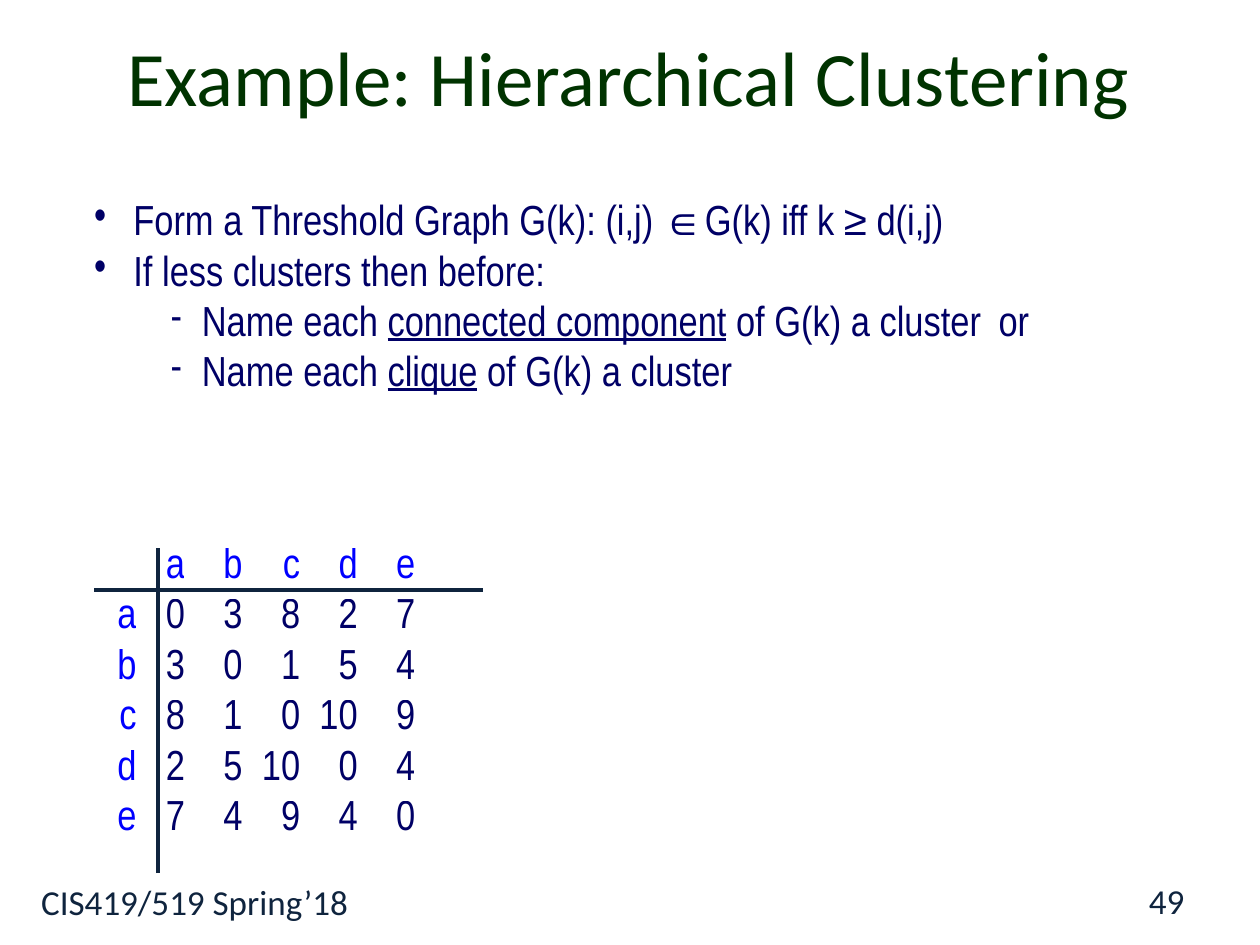
import pptx
import pptx.util
import pptx.dml.color
import pptx.enum.shapes
import pptx.enum.text
from lxml import etree

Cm, Pt = pptx.util.Cm, pptx.util.Pt
RGB = pptx.dml.color.RGBColor
ALIGN = pptx.enum.text.PP_ALIGN
MIDDLE = pptx.enum.text.MSO_ANCHOR.MIDDLE

NAVY = RGB(0x00, 0x00, 0x66)
BLUE = RGB(0x00, 0x00, 0xFF)
GREEN = RGB(0x00, 0x33, 0x00)
SLATE = RGB(0x0F, 0x24, 0x3E)
BODY = "Arial Narrow"
HEAD = "Calibri"

# Bullet, left margin and hanging indent in cm, runs as (text, underlined)
POINTS = [
    ("•", 0.79, 0.79, [("Form a Threshold Graph G(k): (i,j) ∈G(k) iff k ≥ d(i,j)", False)]),
    ("•", 0.79, 0.79, [("If less clusters then before:", False)]),
    ("-", 2.17, 0.63, [("Name each ", False), ("connected component", True),
                       (" of G(k) a cluster\tor", False)]),
    ("-", 2.17, 0.63, [("Name each ", False), ("clique", True),
                       (" of G(k) a cluster", False)]),
]
OR_TAB = 18.64

NAMES = "abcde"
DIST = [
    [0, 3, 8, 2, 7],
    [3, 0, 1, 5, 4],
    [8, 1, 0, 10, 9],
    [2, 5, 10, 0, 4],
    [7, 4, 9, 4, 0],
]


def style(run, font, size, color):
    run.font.name = font
    run.font.size = Pt(size)
    run.font.color.rgb = color


def add_box(slide, left, top, width, height):
    box = slide.shapes.add_textbox(Cm(left), Cm(top), Cm(width), Cm(height))
    return box.text_frame


def add_label(slide, place, text, size, color, align=ALIGN.LEFT):
    frame = add_box(slide, *place)
    frame.text = text
    para = frame.paragraphs[0]
    para.alignment = align
    style(para.runs[0], HEAD, size, color)
    return frame


def set_bullet(para, mark, margin, hang):
    props = para._p.get_or_add_pPr()
    props.set("marL", str(Cm(margin)))
    props.set("indent", str(-Cm(hang)))
    space = props.nsmap["a"]
    etree.SubElement(props, f"{{{space}}}buFont", typeface=BODY)
    etree.SubElement(props, f"{{{space}}}buChar", char=mark)
    tabs = etree.SubElement(props, f"{{{space}}}tabLst")
    etree.SubElement(tabs, f"{{{space}}}tab", pos=str(Cm(OR_TAB)), algn="l")


def add_points(slide, place):
    frame = add_box(slide, *place)
    frame.word_wrap = False
    for i, (mark, margin, hang, parts) in enumerate(POINTS):
        para = frame.add_paragraph() if i else frame.paragraphs[0]
        set_bullet(para, mark, margin, hang)
        para.font.size = Pt(24)
        for text, under in parts:
            run = para.add_run()
            run.text = text
            style(run, BODY, 24, NAVY)
            if under:
                run.font.underline = True


def add_matrix(slide, left, top):
    rows = [["", *NAMES]] + [[n, *vals] for n, vals in zip(NAMES, DIST)]
    widths = [0.85, 0.98] + [1.16] * 4
    high = 1.01
    table = slide.shapes.add_table(
        len(rows), len(widths), Cm(left), Cm(top),
        Cm(sum(widths)), Cm(high * len(rows))).table
    table.first_row = table.horz_banding = False
    for col, width in zip(table.columns, widths):
        col.width = Cm(width)
    for r, vals in enumerate(rows):
        table.rows[r].height = Cm(high)
        for c, val in enumerate(vals):
            cell = table.cell(r, c)
            cell.fill.background()
            cell.margin_left = cell.margin_right = 0
            cell.margin_top = cell.margin_bottom = 0
            cell.text_frame.text = str(val)
            para = cell.text_frame.paragraphs[0]
            para.alignment = ALIGN.RIGHT
            para.font.size = Pt(24)
            for run in para.runs:
                style(run, BODY, 24, BLUE if r == 0 or c == 0 else NAVY)


def add_rule(slide, x1, y1, x2, y2):
    kind = pptx.enum.shapes.MSO_CONNECTOR.STRAIGHT
    rule = slide.shapes.add_connector(kind, Cm(x1), Cm(y1), Cm(x2), Cm(y2))
    rule.line.color.rgb = SLATE
    rule.line.width = Pt(2.25)
    props = rule._element.spPr
    etree.SubElement(props, f"{{{props.nsmap['a']}}}effectLst")


def main():
    prs = pptx.Presentation()
    prs.slide_width, prs.slide_height = Cm(25.4), Cm(19.05)
    slide = prs.slides.add_slide(prs.slide_layouts[6])

    # Footer and slide number
    add_label(slide, (0.58, 17.63, 16, 1.42), "CIS419/519 Spring’18", 20, SLATE)
    number = add_label(slide, (18.21, 17.65, 5.92, 1.02), "49", 20, SLATE, ALIGN.RIGHT)
    number.vertical_anchor = MIDDLE

    # Title and bullet points
    add_label(slide, (2.21, 0.48, 20.93, 2.13), "Example: Hierarchical Clustering",
              44, GREEN, ALIGN.CENTER)
    add_points(slide, (1.65, 3.78, 20.9, 4.32))

    # Distance matrix with its two rules
    add_matrix(slide, 1.9, 11.04)
    add_rule(slide, 1.9, 11.89, 9.73, 11.89)
    add_rule(slide, 3.18, 17.6, 3.18, 11.05)

    prs.save("out.pptx")


if __name__ == "__main__":
    main()
